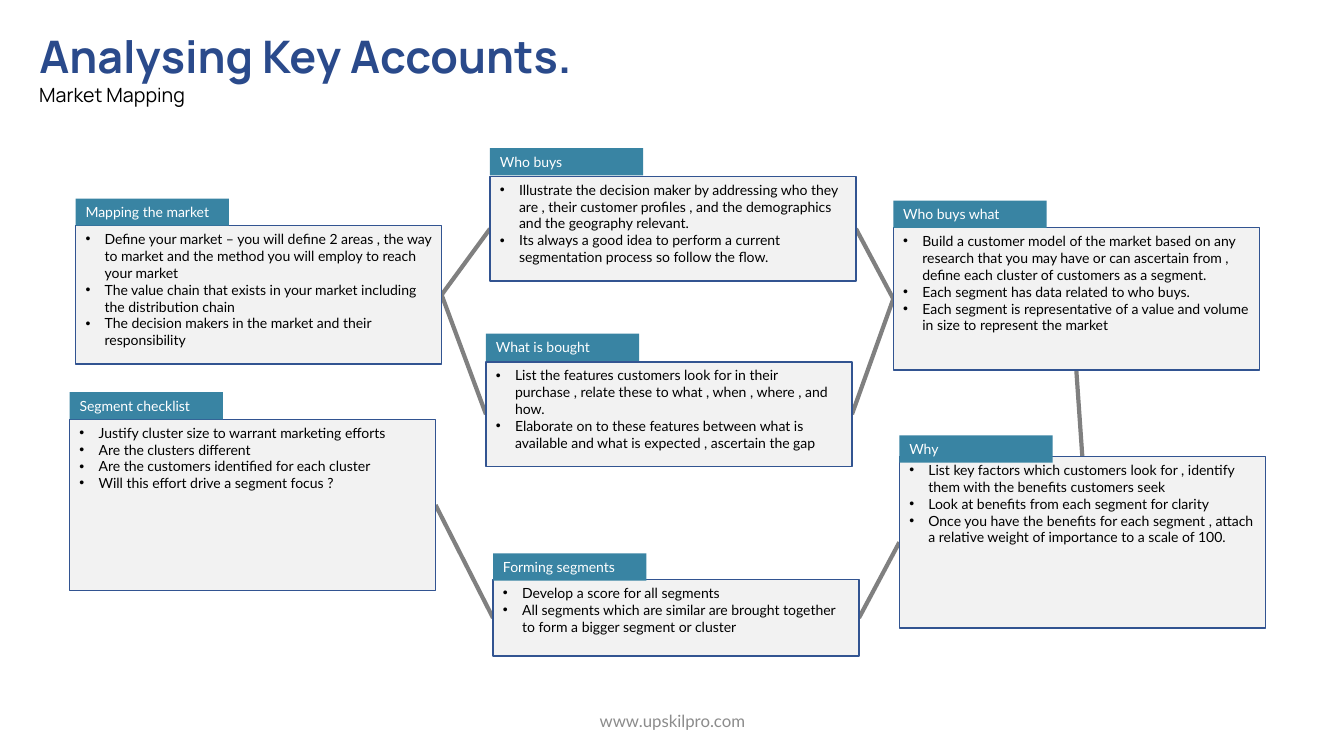
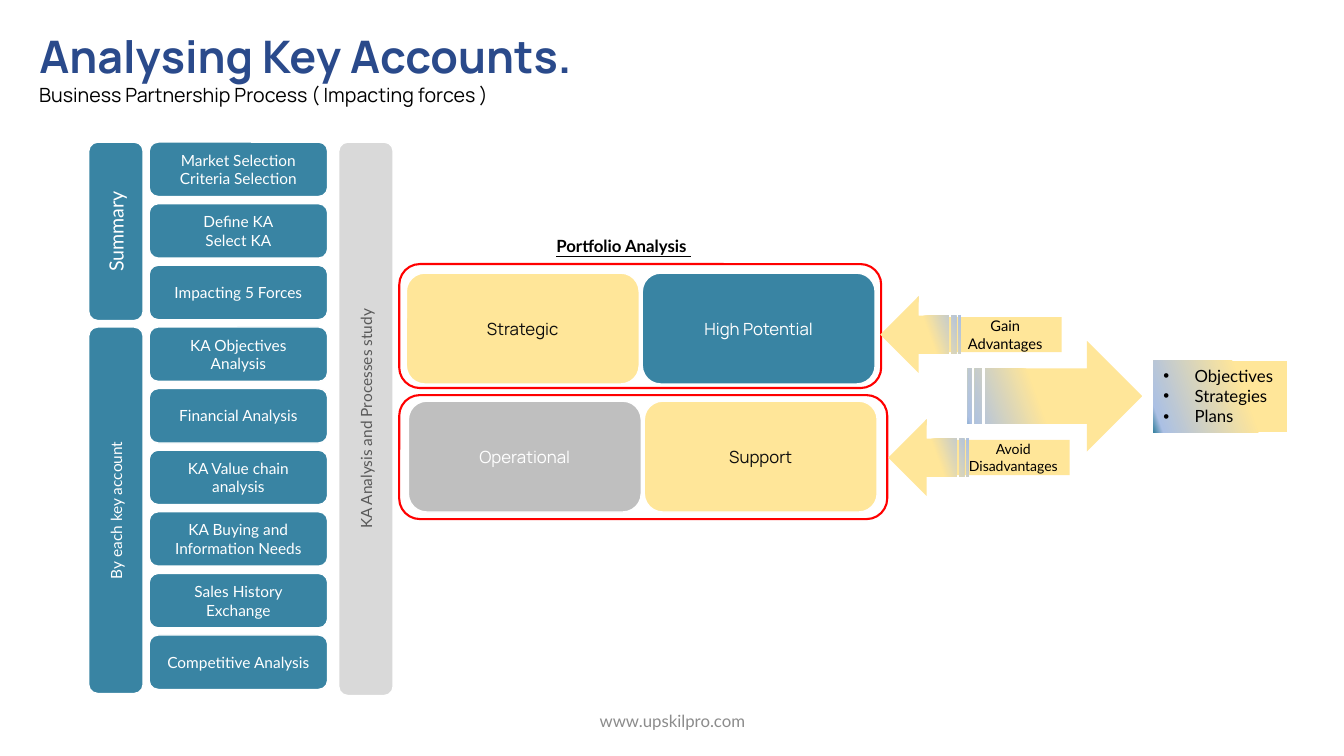
from dataclasses import dataclass

from pptx import Presentation
from pptx.dml.color import RGBColor
from pptx.enum.shapes import MSO_CONNECTOR, MSO_SHAPE
from pptx.enum.text import MSO_ANCHOR, PP_ALIGN
from pptx.oxml import parse_xml
from pptx.oxml.ns import nsdecls, qn
from pptx.util import Inches, Pt

LEFT, RIGHT, TOP, BOTTOM = 1, 3, 0, 2  # connection sites of a rectangle


@dataclass(frozen=True)
class Theme:
    head: str = "Manrope"
    body: str = "Lato"
    navy: str = "2A4A8B"
    border: str = "325491"
    teal: str = "3984A3"
    yellow: str = "FFE699"
    pale: str = "F2F2F2"
    light: str = "D9D9D9"
    silver: str = "BFBFBF"
    link: str = "808080"
    footer: str = "8C8C8C"
    slate: str = "595959"
    black: str = "000000"
    ink: str = "0D0D0D"
    white: str = "FFFFFF"
    red: str = "FF0000"
    title_size: float = 32
    large: float = 14
    medium: float = 12
    step_size: float = 11
    small: float = 10
    fade: tuple = ((94, "ABC0E4"), (100, "3984A3"), (100, "C7D5ED"))


T = Theme()


@dataclass(frozen=True)
class Box:
    """Area on a grid whose columns and rows are a tenth of an inch."""
    x: float
    y: float
    w: float
    h: float

    def area(self, dx, dy, w, h):
        return Box(self.x + dx, self.y + dy, w, h)

    def emu(self):
        return [Inches(round(v / 10, 3)) for v in (self.x, self.y, self.w, self.h)]


TITLE = Box(2.9, 2.3, 70.1, 6)
SUBTITLE = Box(2.9, 7.7, 70.1, 3.4)
FOOTER = Box(44.2, 69.5, 45, 4)


def rgb(value):
    return RGBColor.from_string(value)


def write(sp, lines, size=T.small, font=T.body, color=T.black, bold=False,
          underline=False, align=PP_ALIGN.LEFT, anchor=MSO_ANCHOR.TOP, indent=0):
    """Fill a shape with one paragraph per line; an indent adds bullets."""
    tf = sp.text_frame
    tf.word_wrap = True
    tf.vertical_anchor = anchor
    for i, line in enumerate(lines):
        p = tf.paragraphs[0] if i == 0 else tf.add_paragraph()
        p.alignment = align
        if indent:
            pPr = p._p.get_or_add_pPr()
            pPr.set("marL", str(Inches(indent)))
            pPr.set("indent", str(-Inches(indent)))
            pPr.append(parse_xml(f'<a:buFont {nsdecls("a")} typeface="Arial"/>'))
            pPr.append(parse_xml(f'<a:buChar {nsdecls("a")} char="•"/>'))
        r = p.add_run()
        r.text = line
        r.font.size, r.font.name = Pt(size), font
        r.font.bold, r.font.underline = bold, underline
        r.font.color.rgb = rgb(color)


def write_mid(sp, lines, **fmt):
    write(sp, lines, align=PP_ALIGN.CENTER, anchor=MSO_ANCHOR.MIDDLE, **fmt)


def draw(s, box, kind=MSO_SHAPE.RECTANGLE, fill=None, line=None, width=1, turn=0):
    sp = s.shapes.add_shape(kind, *box.emu())
    sp.shadow.inherit = False
    sp.rotation = turn
    if fill:
        sp.fill.solid()
        sp.fill.fore_color.rgb = rgb(fill)
    else:
        sp.fill.background()
    if line:
        sp.line.color.rgb = rgb(line)
        sp.line.width = Pt(width)
    else:
        sp.line.fill.background()
    return sp


def draw_faded(s, box, kind, start, turn=0):
    """Shape that fades from yellow to blue, starting at a percentage."""
    sp = draw(s, box, kind, turn=turn)
    stops = "".join(f'<a:gs pos="{pos * 1000}"><a:srgbClr val="{c}"/></a:gs>'
                    for pos, c in ((start, T.yellow),) + T.fade)
    spPr = sp._element.spPr
    spPr.replace(spPr.find(qn("a:noFill")), parse_xml(
        f'<a:gradFill {nsdecls("a")} rotWithShape="1"><a:gsLst>{stops}</a:gsLst>'
        f'<a:lin ang="{160 * 60000}" scaled="0"/></a:gradFill>'))
    return sp


def draw_link(s):
    link = s.shapes.add_connector(MSO_CONNECTOR.STRAIGHT, 0, 0, 0, 0)
    link.line.color.rgb = rgb(T.link)
    link.line.width = Pt(3)
    link._element.spPr.append(parse_xml(f'<a:effectLst {nsdecls("a")}/>'))
    return link


def add_slide(prs, subtitle):
    """Slide with the shared title, subtitle and footer."""
    s = prs.slides.add_slide(prs.slide_layouts[5])
    title = s.shapes.title
    title.left, title.top, title.width, title.height = TITLE.emu()
    write(title, ["Analysing Key Accounts."], size=T.title_size, font=T.head,
          color=T.navy, bold=True)
    write(s.shapes.add_textbox(*SUBTITLE.emu()), [subtitle], size=T.large, font=T.head)
    write_mid(s.shapes.add_textbox(*FOOTER.emu()), ["www.upskilpro.com"],
              size=T.medium, color=T.footer)
    return s


# Market mapping: name -> (body box, rise of the tag, bullets)
CARDS = {
    "Mapping the market": (Box(7.5, 22.4, 36.3, 13.7), 2.7, [
        "Define your market – you will define 2 areas , the way to market and the "
        "method you will employ to reach your market",
        "The value chain that exists in your market including the distribution chain",
        "The decision makers in the market and their responsibility"]),
    "Who buys": (Box(48.6, 17.5, 36.3, 10.4), 2.8, [
        "Illustrate the decision maker by addressing who they are , their customer "
        "profiles , and the demographics and the geography relevant.",
        "Its always a good idea to perform a current segmentation process so follow "
        "the flow."]),
    "Who buys what": (Box(88.6, 22.6, 36.3, 14.1), 2.7, [
        "Build a customer model of the market based on any research that you may have "
        "or can ascertain from , define each cluster of customers as a segment.",
        "Each segment has data related to who buys.",
        "Each segment is representative of a value and volume in size to represent "
        "the market"]),
    "What is bought": (Box(48.2, 35.9, 36.3, 10.4), 2.8, [
        "List the features customers look for in their purchase , relate these to "
        "what , when , where , and how.",
        "Elaborate on to these features between what is available and what is "
        "expected , ascertain the gap"]),
    "Why": (Box(89.2, 45.3, 36.3, 17), 2.1, [
        "List key factors which customers look for , identify them with the benefits "
        "customers seek",
        "Look at benefits from each segment for clarity",
        "Once you have the benefits for each segment , attach a relative weight of "
        "importance to a scale of 100."]),
    "Forming segments": (Box(48.9, 57.5, 36.3, 7.6), 2.6, [
        "Develop a score for all segments",
        "All segments which are similar are brought together to form a bigger segment "
        "or cluster"]),
    "Segment checklist": (Box(6.9, 41.6, 36.3, 17), 2.7, [
        "Justify cluster size to warrant marketing efforts",
        "Are the clusters different",
        "Are the customers identified for each cluster",
        "Will this effort drive a segment focus ?"]),
}

LINKS = [
    ("Mapping the market", RIGHT, "Who buys", LEFT),
    ("Mapping the market", RIGHT, "What is bought", LEFT),
    ("Who buys", RIGHT, "Who buys what", LEFT),
    ("What is bought", RIGHT, "Who buys what", LEFT),
    ("Who buys what", BOTTOM, "Why", TOP),
    ("Why", LEFT, "Forming segments", RIGHT),
    ("Forming segments", LEFT, "Segment checklist", RIGHT),
]


def add_card(s, box, name, rise, bullets):
    body = draw(s, box, fill=T.pale, line=T.border)
    write(body, bullets, indent=0.19)
    tag = draw(s, box.area(0, -rise, 15.2, 2.7), fill=T.teal)
    write(tag, [name], color=T.white)
    return body


def market_slide(prs):
    s = add_slide(prs, "Market Mapping")
    # Links lie behind the cards, so they are made first and joined last
    links = [draw_link(s) for _ in LINKS]
    bodies = {name: add_card(s, box, name, rise, bullets)
              for name, (box, rise, bullets) in CARDS.items()}
    for link, (start, start_site, end, end_site) in zip(links, LINKS):
        link.begin_connect(bodies[start], start_site)
        link.end_connect(bodies[end], end_site)


# Partnership process
STEPS = [
    ["Market Selection", "Criteria Selection"], ["Define KA", "Select KA"],
    ["Impacting 5 Forces"], ["KA Objectives Analysis"], ["Financial Analysis"],
    ["KA Value chain analysis"], ["KA Buying and Information Needs"],
    ["Sales History Exchange"], ["Competitive Analysis"],
]


def add_tile(s, box, lines, fill=T.teal, turn=0, **fmt):
    sp = draw(s, box, MSO_SHAPE.ROUNDED_RECTANGLE, fill, T.white, turn=turn)
    write_mid(sp, lines, **fmt)


def add_bar(s, box, text, color=T.white, size=T.step_size, fill=T.teal):
    """Upright bar read from bottom to top."""
    gap = (box.w - box.h) / 2
    add_tile(s, box.area(gap, -gap, box.h, box.w), [text], fill, turn=270,
             color=color, size=size)


def add_process(s, box):
    """Step column between its group bars and the study bar."""
    bar = 5.4
    pitch = (box.h - 0.6 - bar) / (len(STEPS) - 1)
    for i, lines in enumerate(STEPS):
        add_tile(s, box.area(6, i * pitch, 17.7, bar), lines,
                 size=T.step_size, color=T.white)
    add_bar(s, box.area(0, 0, bar, 17.7), "Summary", size=T.large)
    add_bar(s, box.area(0, 3 * pitch, bar, box.h - 0.2 - 3 * pitch),
            "By each key account")
    add_bar(s, box.area(box.w - bar, 0, bar, box.h),
            "KA Analysis and Processes study", color=T.slate, fill=T.light)


def add_portfolio_row(s, box, dx, dy, tiles):
    """Red frame around a pair of tiles."""
    for i, (name, fill, color) in enumerate(tiles):
        add_tile(s, box.area(dx + 23.4 * i, dy, 23.1, 11), [name], fill,
                 size=T.medium, font=T.head, color=color)
    draw(s, box, MSO_SHAPE.ROUNDED_RECTANGLE, line=T.red, width=1.5)


def add_force(s, box, lines, size):
    """Arrow pointing left out of its label."""
    label = draw(s, box.area(6.8, 2.05, 11.2, 3.5), fill=T.yellow)
    write_mid(label, lines, size=size)
    draw_faded(s, box.area(0, 0, 8, box.h), MSO_SHAPE.STRIPED_RIGHT_ARROW, 58, turn=180)


def add_outcome(s, box):
    draw_faded(s, box.area(0, 0, 17.3, box.h), MSO_SHAPE.STRIPED_RIGHT_ARROW, 58)
    goals = draw_faded(s, box.area(18.4, 2, 13.3, 7.1), MSO_SHAPE.RECTANGLE, 33)
    write(goals, ["Objectives", "Strategies", "Plans"], size=T.medium, indent=0.31)


def process_slide(prs):
    s = add_slide(prs, "Business Partnership Process ( Impacting forces )")
    add_process(s, Box(8.8, 14.1, 30.2, 54.9))
    add_portfolio_row(s, Box(39.6, 26.2, 47.8, 12.3), 0.7, 0.9, [
        ("Strategic", T.yellow, T.ink), ("High Potential", T.teal, T.white)])
    add_portfolio_row(s, Box(39.6, 39.2, 48.4, 12.3), 0.9, 0.6, [
        ("Operational", T.silver, T.white), ("Support", T.yellow, T.ink)])
    heading = draw(s, Box(48.3, 22.9, 27.1, 3), fill=T.white)
    write(heading, ["Portfolio Analysis "], size=T.medium, bold=True,
          underline=True, align=PP_ALIGN.CENTER)
    add_outcome(s, Box(96, 33.8, 31.7, 11))
    add_force(s, Box(87.3, 29.4, 18, 7.6), ["Gain Advantages"], 10.5)
    add_force(s, Box(88.1, 41.6, 18, 7.6), ["Avoid", "Disadvantages"], T.small)


def main():
    prs = Presentation()
    prs.slide_width, prs.slide_height = Inches(13.33), Inches(7.5)
    market_slide(prs)
    process_slide(prs)
    prs.save("out.pptx")


if __name__ == "__main__":
    main()
